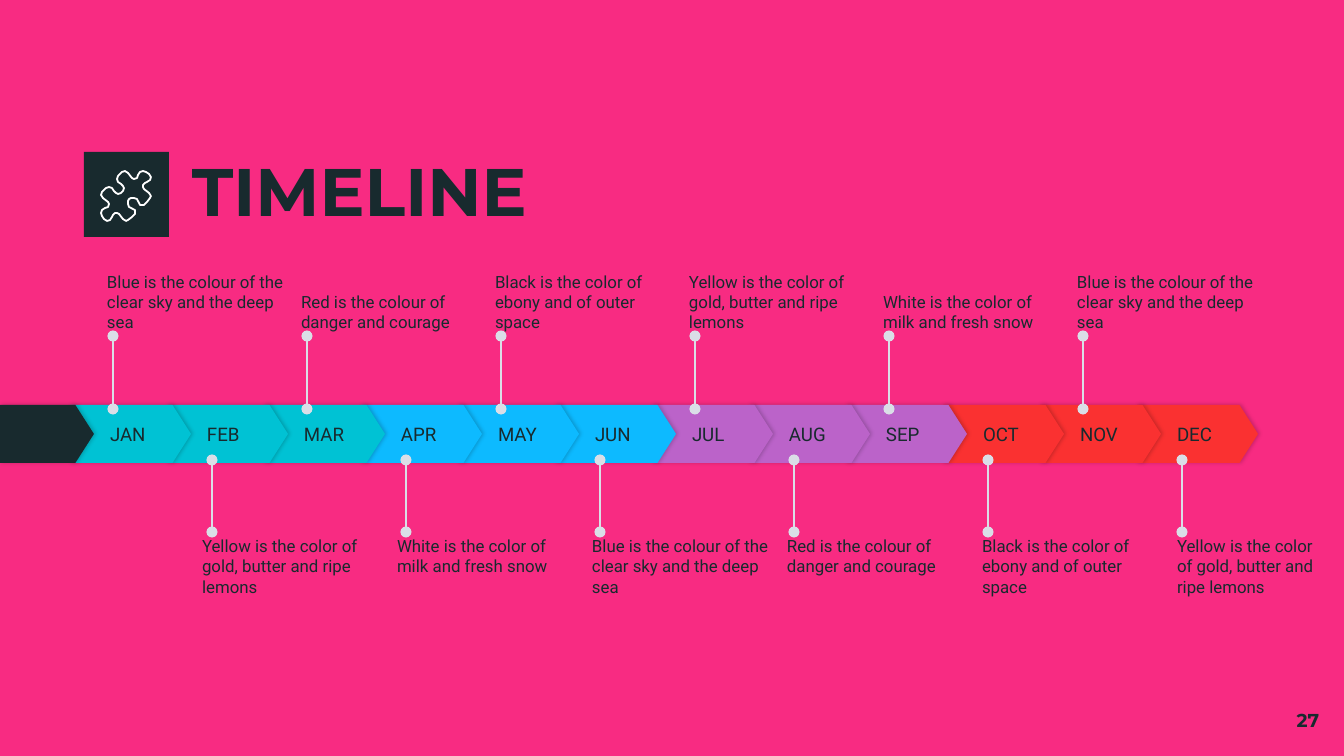
from lxml.etree import SubElement
from pptx import Presentation
from pptx.dml.color import RGBColor
from pptx.enum.shapes import MSO_CONNECTOR as Connector, MSO_SHAPE as Shape
from pptx.enum.text import MSO_ANCHOR as Anchor, PP_ALIGN as Align
from pptx.oxml.ns import qn
from pptx.util import Emu, Pt

SCALE = 9144000 / 1344

PINK = RGBColor(0xF8, 0x2B, 0x82)
DARK = RGBColor(0x18, 0x2A, 0x2E)
WHITE = RGBColor(0xFF, 0xFF, 0xFF)
GREY = RGBColor(0xDA, 0xDE, 0xE7)
TEAL = RGBColor(0x00, 0xC2, 0xD4)
BLUE = RGBColor(0x0D, 0xBA, 0xFF)
PURPLE = RGBColor(0xBB, 0x63, 0xC9)
RED = RGBColor(0xFA, 0x31, 0x31)

QUARTER_COLORS = [TEAL, BLUE, PURPLE, RED]
MONTHS = ["JAN", "FEB", "MAR", "APR", "MAY", "JUN",
          "JUL", "AUG", "SEP", "OCT", "NOV", "DEC"]
MONTH_PITCH = 97

BLUE_NOTE = "Blue is the colour of the clear sky and the deep sea"
RED_NOTE = "Red is the colour of danger and courage"
BLACK_NOTE = "Black is the color of ebony and of outer space"
YELLOW_NOTE = "Yellow is the color of gold, butter and ripe lemons"
WHITE_NOTE = "White is the color of milk and fresh snow"
UPPER_NOTES = [BLUE_NOTE, RED_NOTE, BLACK_NOTE, YELLOW_NOTE, WHITE_NOTE, BLUE_NOTE]
LOWER_NOTES = [YELLOW_NOTE, WHITE_NOTE, BLUE_NOTE, RED_NOTE, BLACK_NOTE, YELLOW_NOTE]

PUZZLE_HALF = [
    (28, 28), (30, 27), (33, 27), (36, 28), (37, 30), (38, 32), (39, 34), (41, 34),
    (43, 34), (46, 31), (49, 27), (50, 25), (48, 22), (43, 18), (42, 16), (42, 14),
    (44, 12), (46, 11), (49, 9), (50, 6), (48, 3), (45, 1), (42, 0), (39, 1),
    (37, 4), (36, 7), (33, 8), (31, 7), (27, 2), (24, 0), (21, 1), (17, 5),
    (16, 8), (17, 11), (20, 13), (22, 15), (23, 17), (22, 20), (21, 21),
]


def px(length):
    """Turn px into EMU."""
    return Emu(round(length * SCALE))


def write(shape, text, size, font="Roboto", bold=False, anchor=Anchor.TOP,
          align=Align.LEFT, insets=(0, 0, 0, 0), spacing=None):
    """Write one styled run into a shape and return nothing."""
    frame = shape.text_frame
    frame.word_wrap = True
    frame.vertical_anchor = anchor
    (frame.margin_left, frame.margin_top,
     frame.margin_right, frame.margin_bottom) = map(px, insets)
    paragraph = frame.paragraphs[0]
    paragraph.alignment = align
    paragraph.line_spacing = spacing
    run = paragraph.add_run()
    run.text = text
    run.font.name = font
    run.font.size = Pt(size)
    run.font.bold = bold
    run.font.color.rgb = DARK


def add_text(slide, box, text, size, **style):
    """Place a text box at a px box."""
    write(slide.shapes.add_textbox(*map(px, box)), text, size, **style)


def add_block(slide, preset, box, color):
    """Place a borderless filled shape without a shadow."""
    shape = slide.shapes.add_shape(preset, *map(px, box))
    shape.shadow.inherit = False
    shape.fill.solid()
    shape.fill.fore_color.rgb = color
    shape.line.fill.background()
    return shape


def add_arrow(slide, box, color):
    """Place a softly shadowed pentagon arrow."""
    arrow = add_block(slide, Shape.PENTAGON, box, color)
    arrow.adjustments[0] = 0.32
    effects = arrow.element.spPr.find(qn("a:effectLst"))
    shadow = SubElement(effects, qn("a:outerShdw"), blurRad=str(Pt(2.2)),
                        dist=str(Pt(0.8)), dir="0", algn="bl", rotWithShape="0")
    black = SubElement(shadow, qn("a:srgbClr"), val="000000")
    SubElement(black, qn("a:alpha"), val="20000")
    return arrow


def add_pin(slide, x, start, end):
    """Draw a vertical line with a dot at each end."""
    pin = slide.shapes.add_connector(Connector.STRAIGHT, px(x), px(start), px(x), px(end))
    pin.line.color.rgb = GREY
    pin.line.width = Pt(0.75)
    for tag in ("a:headEnd", "a:tailEnd"):
        SubElement(pin.line._get_or_add_ln(), qn(tag), type="oval")
    SubElement(pin.element.spPr, qn("a:effectLst"))


def add_puzzle(slide, left, top):
    """Outline a puzzle piece that is symmetric about its diagonal."""
    mirrored = [(y, x) for x, y in reversed(PUZZLE_HALF[1:-1])]
    points = [(left + x, top + y) for x, y in PUZZLE_HALF + mirrored]
    builder = slide.shapes.build_freeform(*points[0], scale=SCALE)
    builder.add_line_segments(points[1:], close=True)
    puzzle = builder.convert_to_shape()
    puzzle.shadow.inherit = False
    puzzle.fill.background()
    puzzle.line.color.rgb = WHITE
    puzzle.line.width = Pt(0.96)


def add_header(slide, left, top, width, height):
    """Place the icon tile and the title."""
    add_block(slide, Shape.RECTANGLE, (left, top, height, height), DARK)
    add_puzzle(slide, left + 17, top + 19)
    add_text(slide, (left + 108, top, width - 108, height), "TIMELINE", 36,
             font="Montserrat", bold=True, anchor=Anchor.MIDDLE, spacing=0.9)


def add_months(slide, left, top, height):
    """Stack the month arrows from last to first, then the lead-in arrow."""
    for index, month in reversed(list(enumerate(MONTHS))):
        box = (left + 70 + index * MONTH_PITCH, top, 121, height)
        arrow = add_arrow(slide, box, QUARTER_COLORS[index // 3])
        write(arrow, month, 10, anchor=Anchor.MIDDLE, insets=(40, 0, 0, 0))
    add_arrow(slide, (left, top, 94, height), DARK)


def add_notes(slide, notes, box, pitch, pin_left, pin_start, pin_end, anchor):
    """Place a row of notes, each with its pin, kept inside the slide margin."""
    left, top, width, height = box
    for index, note in enumerate(notes):
        add_pin(slide, pin_left + index * 2 * MONTH_PITCH, pin_start, pin_end)
        x = left + index * pitch
        add_text(slide, (x, top, min(width, 1329 - x), height), note, 9, anchor=anchor)


def add_page_number(slide, left, top, width, height):
    """Place the page number."""
    add_text(slide, (left, top, width, height), "27", 10, font="Montserrat",
             bold=True, align=Align.RIGHT, insets=(13, 13, 13, 13))


def main():
    """Build and save the timeline slide."""
    presentation = Presentation()
    presentation.slide_width, presentation.slide_height = px(1344), px(756)
    slide = presentation.slides.add_slide(presentation.slide_layouts[6])
    slide.background.fill.solid()
    slide.background.fill.fore_color.rgb = PINK
    add_header(slide, 84, 152, 1167, 85)
    add_page_number(slide, 1251, 698, 81, 58)
    add_months(slide, 0, 405, 58)
    add_notes(slide, UPPER_NOTES, (107, 254, 184, 78), 194, 113, 409, 336, Anchor.BOTTOM)
    add_notes(slide, LOWER_NOTES, (202, 536, 184, 78), 195, 212, 532, 460, Anchor.TOP)
    presentation.save("out.pptx")


if __name__ == "__main__":
    main()
